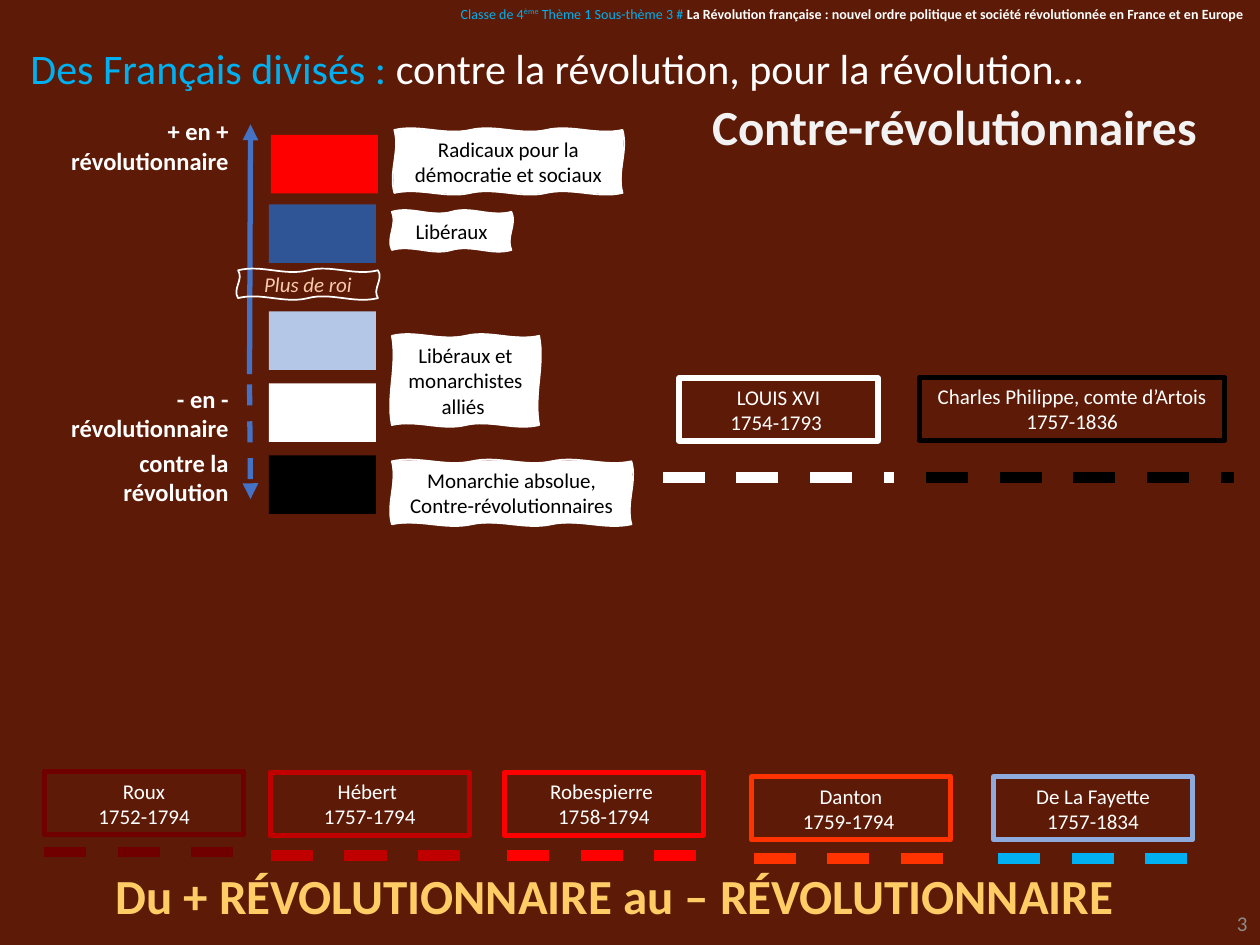
from copy import deepcopy
from math import hypot

from lxml.etree import SubElement
from pptx import Presentation
from pptx.dml.color import RGBColor
from pptx.enum.dml import MSO_LINE_DASH_STYLE as DASH
from pptx.enum.shapes import MSO_CONNECTOR as CONN, MSO_SHAPE as SHAPE
from pptx.enum.text import MSO_ANCHOR as ANCHOR, PP_ALIGN as ALIGN
from pptx.oxml.ns import qn
from pptx.util import Cm, Pt

COLORS = {
    "background": "5D1B07", "white": "FFFFFF", "black": "000000",
    "cyan": "00B0F0", "axis": "4472C4", "red": "FF0000", "blue": "2F5597",
    "pale_blue": "B4C7E7", "sky": "8FAADC", "peach": "F8CBAD",
    "gold": "FFCC66", "grey": "8C8C8C", "light": "F2F2F2",
    "maroon": "700000", "crimson": "C00000", "orange": "FF3300",
}
BOX_W, BOX_H = 4.01, 1.27


def rgb(name):
    return RGBColor.from_string(COLORS[name])


def write(tf, paragraphs, size=12, color="white", bold=False, italic=False,
          align=ALIGN.CENTER, anchor=ANCHOR.MIDDLE):
    tf.word_wrap = True
    tf.vertical_anchor = anchor
    for i, runs in enumerate(paragraphs):
        p = tf.add_paragraph() if i else tf.paragraphs[0]
        p.alignment = align
        for text, fmt in ([(runs, {})] if isinstance(runs, str) else runs):
            r = p.add_run()
            r.text = text
            r.font.name = "Calibri"
            r.font.size = Pt(size)
            r.font.bold = fmt.get("bold", bold)
            r.font.italic = italic
            r.font.color.rgb = rgb(fmt.get("color", color))
            if "baseline" in fmt:
                r.font._element.set("baseline", fmt["baseline"])


def style(shape, fill=None, line=None, width=1):
    shape.shadow.inherit = False
    if fill:
        shape.fill.solid()
        shape.fill.fore_color.rgb = rgb(fill)
    else:
        shape.fill.background()
    if line:
        shape.line.color.rgb = rgb(line)
        shape.line.width = Pt(width)
    else:
        shape.line.fill.background()


def add_text(s, x, y, w, h, paragraphs, **fmt):
    sp = s.shapes.add_textbox(Cm(x), Cm(y), Cm(w), Cm(h))
    write(sp.text_frame, paragraphs, **fmt)
    return sp


def add_rect(s, x, y, w, h, **look):
    sp = s.shapes.add_shape(SHAPE.RECTANGLE, Cm(x), Cm(y), Cm(w), Cm(h))
    style(sp, **look)
    return sp


def add_line(s, x1, y1, x2, y2, color, width, dashed=True, arrow=False):
    line = s.shapes.add_connector(CONN.STRAIGHT, Cm(x1), Cm(y1), Cm(x2), Cm(y2))
    line.line.color.rgb = rgb(color)
    line.line.width = Pt(width)
    if dashed:
        line.line.dash_style = DASH.DASH
    if arrow:
        SubElement(line.line._get_or_add_ln(), qn("a:tailEnd"), type="triangle")
    SubElement(line._element.spPr, qn("a:effectLst"))


def bend(outline, bulge):
    points = [(int(pt.get("x")), int(pt.get("y")))
              for pt in outline.iter(qn("a:pt"))]
    segments = outline.findall(qn("a:lnTo"))
    for segment, (x1, y1), (x2, y2) in zip(segments, points, points[1:]):
        dx, dy = x2 - x1, y2 - y1
        scale = Cm(bulge) / (hypot(dx, dy) or 1)
        segment.tag = qn("a:cubicBezTo")
        end = segment[0]
        for share, sign in [(1 / 3, 1), (2 / 3, -1)]:
            control = deepcopy(end)
            control.set("x", str(round(x1 + dx * share + sign * dy * scale)))
            control.set("y", str(round(y1 + dy * share - sign * dx * scale)))
            end.addprevious(control)


def add_wavy_label(s, x, y, w, h, text, waves, fill="white", **fmt):
    top = [(Cm(x + w * i / waves), Cm(y)) for i in range(waves + 1)]
    bottom = [(px, Cm(y + h)) for px, _ in reversed(top)]
    builder = s.shapes.build_freeform(*top[0])
    builder.add_line_segments(top[1:] + bottom + top[:1], close=False)
    sp = builder.convert_to_shape()
    style(sp, fill=fill, line="white")
    outline = next(sp._element.iter(qn("a:path")))
    SubElement(outline, qn("a:close"))
    if fill:
        area = deepcopy(outline)
        outline.set("fill", "none")
        area.set("stroke", "0")
        outline.addnext(area)
        bend(area, 0.07)
    bend(outline, 0.12)
    write(sp.text_frame, text, **fmt)


def add_person(s, x, y, name, years, color, dash, w=BOX_W):
    sp = add_rect(s, x, y, w, BOX_H, line=color, width=3)
    write(sp.text_frame, [name, years])
    dash_x, dash_y, length, dash_color = dash
    add_line(s, dash_x, dash_y, dash_x + length, dash_y, dash_color, 6)


def add_headings(s):
    title = s.shapes.title
    title.left, title.top, title.width, title.height = (
        Cm(0.36), Cm(0.72), Cm(24.3), Cm(1.27))
    write(title.text_frame,
          [[("Des Français divisés : ", {"color": "cyan"}),
            ("contre la révolution, pour la révolution…", {})]],
          size=24, align=ALIGN.LEFT)
    header = add_text(
        s, 0, 0, 25.4, 0.94,
        [[("Classe de 4", {}), ("ème", {"baseline": "30000"}),
          (" Thème 1 Sous-thème 3 # ", {}),
          ("La Révolution française : nouvel ordre politique et société "
           "révolutionnée en France et en Europe ",
           {"color": "white", "bold": True})]],
        size=8, color="cyan", align=ALIGN.RIGHT, anchor=ANCHOR.TOP)
    header.text_frame.paragraphs[0].line_spacing = 0.97
    add_text(s, 13.63, 1.81, 11.23, 1.45, ["Contre-révolutionnaires"],
             size=28, color="light", bold=True)
    add_text(s, 0.89, 17.32, 22.99, 1.45,
             ["Du + RÉVOLUTIONNAIRE au – RÉVOLUTIONNAIRE"],
             size=28, color="gold", bold=True)
    add_text(s, 19.48, 18.19, 5.92, 0.84, ["3"], color="grey",
             align=ALIGN.RIGHT)


def add_scale(s):
    add_line(s, 5.03, 7.54, 5.05, 2.51, "axis", 3, dashed=False, arrow=True)
    add_line(s, 5.03, 7.75, 5.05, 10.06, "axis", 3, arrow=True)
    for x, y, color in [(5.46, 2.72, "red"), (5.42, 4.12, "blue"),
                        (5.42, 6.28, "pale_blue"), (5.42, 7.73, "white"),
                        (5.42, 9.18, "black")]:
        add_rect(s, x, y, 2.16, 1.18, fill=color)
    for y, text in [(2.22, "+ en + révolutionnaire"),
                    (7.61, "- en - révolutionnaire"),
                    (8.9, "contre la révolution")]:
        add_text(s, 0.47, y, 4.39, 1.45, [text], size=14, bold=True,
                 align=ALIGN.RIGHT, anchor=ANCHOR.TOP)
    for x, y, w, h, waves, text in [
        (7.95, 2.62, 4.6, 1.27, 3, ["Radicaux pour la démocratie et sociaux"]),
        (7.9, 4.27, 2.41, 0.77, 2, ["Libéraux"]),
        (7.9, 6.77, 2.97, 1.8, 2, ["Libéraux et monarchistes alliés "]),
        (7.9, 9.3, 4.83, 1.27, 3,
         ["Monarchie absolue,", "Contre-révolutionnaires"]),
    ]:
        add_wavy_label(s, x, y, w, h, text, waves, color="black")
    add_wavy_label(s, 4.8, 5.45, 2.82, 0.56, ["Plus de roi"], 2, fill=None,
                   color="peach", italic=True)


def add_people(s):
    add_person(s, 13.69, 7.62, "LOUIS XVI", "1754-1793 ", "white",
               (13.36, 9.63, 4.67, "white"))
    add_person(s, 18.54, 7.61, "Charles Philippe, comte d’Artois", "1757-1836",
               "black", (18.67, 9.63, 6.2, "black"), w=6.15)
    for x, y, name, years, color, dash_x, dash_y, dash_color in [
        (0.9, 15.56, "Roux", "1752-1794", "maroon", 0.89, 17.18, "maroon"),
        (5.45, 15.57, "Hébert ", "1757-1794", "crimson", 5.46, 17.25, "crimson"),
        (10.17, 15.57, "Robespierre ", "1758-1794", "red", 10.22, 17.25, "red"),
        (15.15, 15.66, "Danton", "1759-1794 ", "orange", 15.19, 17.31, "orange"),
        (20.03, 15.66, "De La Fayette", "1757-1834", "sky", 20.12, 17.31, "cyan"),
    ]:
        add_person(s, x, y, name, years, color,
                   (dash_x, dash_y, 3.91, dash_color))


def main():
    prs = Presentation()
    prs.slide_width, prs.slide_height = Cm(25.4), Cm(19.05)
    s = prs.slides.add_slide(prs.slide_layouts[5])
    s.background.fill.solid()
    s.background.fill.fore_color.rgb = rgb("background")
    add_headings(s)
    add_scale(s)
    add_people(s)
    prs.save("out.pptx")


if __name__ == "__main__":
    main()
